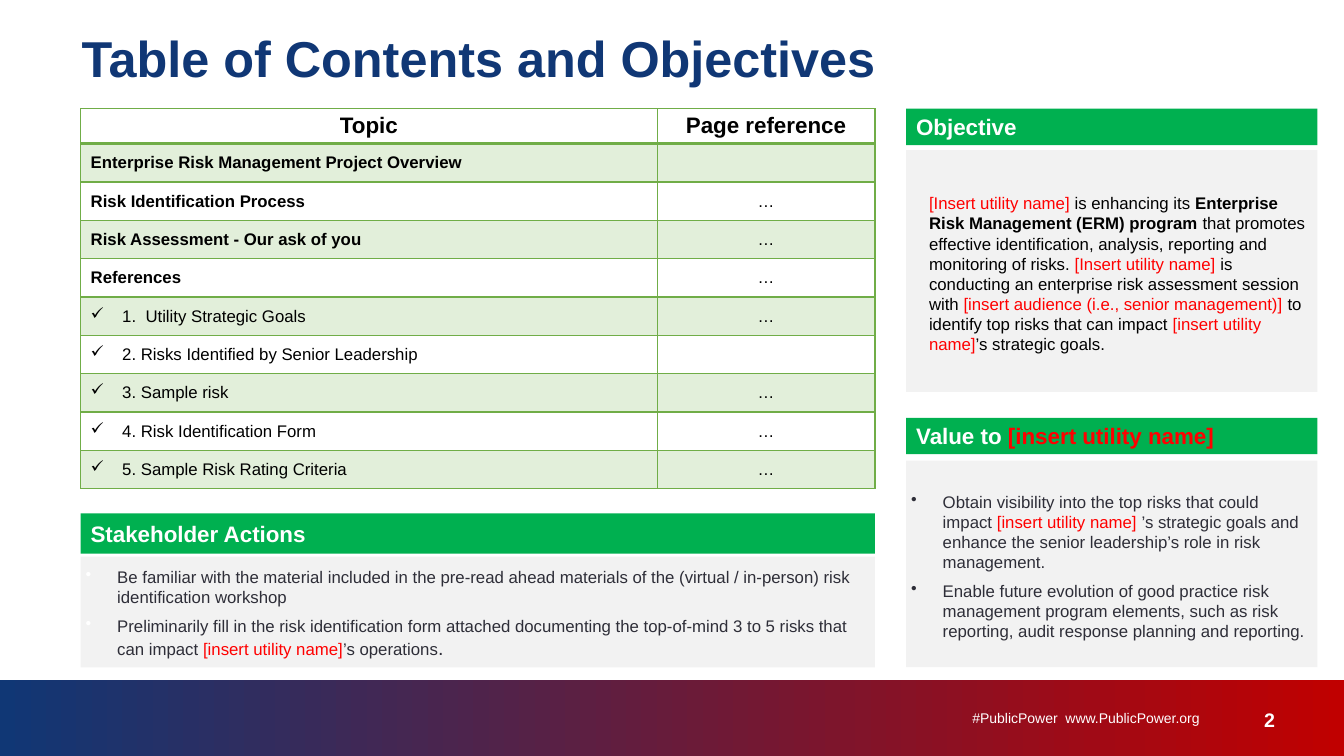
from lxml.etree import SubElement
from pptx import Presentation
from pptx.dml.color import RGBColor
from pptx.enum.shapes import MSO_SHAPE
from pptx.enum.text import MSO_ANCHOR, MSO_AUTO_SIZE, PP_ALIGN
from pptx.oxml.ns import qn
from pptx.util import Pt

NAVY = RGBColor(0x10, 0x37, 0x75)
CRIMSON = RGBColor(0xC0, 0x00, 0x00)
RED = RGBColor(0xFF, 0x00, 0x00)
GREEN = RGBColor(0x00, 0xB0, 0x50)
BORDER_GREEN = RGBColor(0x70, 0xAD, 0x47)
PALE_GREEN = RGBColor(0xE2, 0xEF, 0xDA)
PALE_GRAY = RGBColor(0xF2, 0xF2, 0xF2)
CHARCOAL = RGBColor(0x2E, 0x2E, 0x38)
BLACK = RGBColor(0x00, 0x00, 0x00)
WHITE = RGBColor(0xFF, 0xFF, 0xFF)

LEFT, LEFT_WIDTH = 57.6, 567.4
RIGHT, RIGHT_WIDTH = 647.3, 293.8
HIGHLIGHT = {"color": RED}
BOLD = {"bold": True}


def write_text(frame, paragraphs, size=12, color=BLACK, bold=False, align=PP_ALIGN.LEFT,
               anchor=None, margins=None, line_spacing=None, space_after=0,
               left_indent=0, hanging=0, bullet=None, bullet_color=BLACK):
    if anchor is not None:
        frame.word_wrap = True
        frame.auto_size = MSO_AUTO_SIZE.NONE
        frame.vertical_anchor = anchor
    if margins:
        (frame.margin_left, frame.margin_top,
         frame.margin_right, frame.margin_bottom) = map(Pt, margins)
    for index, runs in enumerate(paragraphs):
        paragraph = frame.paragraphs[0] if index == 0 else frame.add_paragraph()
        paragraph.alignment = align
        paragraph.space_after = Pt(space_after)
        if line_spacing:
            paragraph.line_spacing = Pt(line_spacing)
        properties = paragraph._p.get_or_add_pPr()
        properties.set("marL", str(Pt(left_indent)))
        properties.set("indent", str(-Pt(hanging)))
        if bullet:
            bullet_fill = SubElement(properties, qn("a:buClr"))
            SubElement(bullet_fill, qn("a:srgbClr"), val=str(bullet_color))
            SubElement(properties, qn("a:buChar"), char=bullet)
        for text, changes in runs:
            run = paragraph.add_run()
            run.text = text
            run.font.name = "Arial"
            run.font.size = Pt(changes.get("size", size))
            run.font.bold = changes.get("bold", bold)
            run.font.color.rgb = changes.get("color", color)


def add_borders(cell, bottom_width):
    properties = cell._tc.get_or_add_tcPr()
    for side, width in (("L", 1), ("R", 1), ("T", 1), ("B", bottom_width)):
        border = SubElement(properties, qn(f"a:ln{side}"), w=str(Pt(width)))
        border_fill = SubElement(border, qn("a:solidFill"))
        SubElement(border_fill, qn("a:srgbClr"), val=str(BORDER_GREEN))


presentation = Presentation()
presentation.slide_width, presentation.slide_height = Pt(960), Pt(540)
slide = presentation.slides.add_slide(presentation.slide_layouts[5])

title = slide.shapes.title
title.left, title.top, title.width, title.height = Pt(LEFT), Pt(24.5), Pt(846.7), Pt(52.6)
write_text(title.text_frame, [[("Table of Contents and Objectives", {})]], size=36,
           color=NAVY, bold=True, anchor=MSO_ANCHOR.TOP, margins=(0, 0, 0, 0),
           line_spacing=38, left_indent=0.7)

footer_band = slide.shapes.add_shape(MSO_SHAPE.RECTANGLE, 0, Pt(486), Pt(960), Pt(54))
footer_band.shadow.inherit = False
footer_band.line.fill.background()
footer_band.fill.gradient()
footer_band.fill.gradient_angle = 180
for stop, stop_color in zip(footer_band.fill.gradient_stops, (CRIMSON, NAVY)):
    stop.color.rgb = stop_color

for left, top, width, text, size, bold in (
    (660.2, 507, 196.6, "#PublicPower\u00a0 www.PublicPower.org".replace("\u00a0", " "), 10, False),
    (872.6, 505.8, 38.2, "2", 14, True),
):
    box = slide.shapes.add_textbox(Pt(left), Pt(top), Pt(width), Pt(22))
    write_text(box.text_frame, [[(text, {})]], size=size, color=WHITE, bold=bold,
               align=PP_ALIGN.RIGHT, anchor=MSO_ANCHOR.TOP, margins=(0, 0, 0, 0))

topics = [
    ("Topic", "Page reference"),
    ("Enterprise Risk Management Project Overview", ""),
    ("Risk Identification Process", "…"),
    ("Risk Assessment - Our ask of you", "…"),
    ("References", "…"),
    ("1.  Utility Strategic Goals", "…"),
    ("2. Risks Identified by Senior Leadership", ""),
    ("3. Sample risk", "…"),
    ("4. Risk Identification Form", "…"),
    ("5. Sample Risk Rating Criteria", "…"),
]
table = slide.shapes.add_table(len(topics), 2, Pt(LEFT), Pt(77.6),
                               Pt(LEFT_WIDTH), Pt(271.6)).table
table.columns[0].width, table.columns[1].width = Pt(411.8), Pt(155.6)
for row_index, row in enumerate(topics):
    is_header = row_index == 0
    is_reference = row_index >= 5
    table.rows[row_index].height = Pt(25 if is_header else 27.4)
    for column_index, text in enumerate(row):
        cell = table.cell(row_index, column_index)
        is_topic = column_index == 0
        is_listed = is_reference and is_topic
        cell.vertical_anchor = MSO_ANCHOR.TOP if is_header else MSO_ANCHOR.MIDDLE
        add_borders(cell, 2 if is_header else 1)
        cell.fill.solid()
        cell.fill.fore_color.rgb = PALE_GREEN if row_index % 2 else WHITE
        write_text(cell.text_frame, [[(text, {})]], size=16 if is_header else 12,
                   bold=is_header or (is_topic and not is_reference),
                   align=PP_ALIGN.LEFT if is_topic and not is_header else PP_ALIGN.CENTER,
                   left_indent=22.5 if is_listed else 0,
                   hanging=22.5 if is_listed else 0,
                   bullet="✓" if is_listed else None)

heading_format = {"size": 16, "color": WHITE, "bold": True, "anchor": MSO_ANCHOR.MIDDLE}
list_format = {"color": CHARCOAL, "margins": (3.6, 7.2, 3.6, 3.6), "space_after": 6,
               "left_indent": 22.5, "hanging": 22.5, "bullet": "•"}

objective = [[
    ("[Insert utility name] ", HIGHLIGHT),
    ("is enhancing its ", {}),
    ("Enterprise Risk Management (ERM) program ", BOLD),
    ("that promotes effective identification, analysis, reporting and monitoring of risks. ", {}),
    ("[Insert utility name] ", HIGHLIGHT),
    ("is conducting an enterprise risk assessment session with ", {}),
    ("[insert audience (i.e., senior management)]", HIGHLIGHT),
    (" to identify top risks that can impact ", {}),
    ("[insert utility name]", HIGHLIGHT),
    ("’s strategic goals.", {}),
]]
actions = [
    [("Be familiar with the material included in the pre-read ahead materials of the "
      "(virtual / in-person) risk identification workshop", {})],
    [("Preliminarily fill in the risk identification form attached documenting the "
      "top-of-mind 3 to 5 risks that can impact ", {}),
     ("[insert utility name]", HIGHLIGHT), ("’s operations", {}), (".", {"size": 14})],
]
value = [
    [("Obtain visibility into the top risks that could impact ", {}),
     ("[insert utility name]", HIGHLIGHT),
     (" ’s strategic goals and enhance the senior leadership’s role in risk management.", {})],
    [("Enable future evolution of good practice risk management program elements, such as "
      "risk reporting, audit response planning and reporting.", {})],
]
value_heading = [[("Value to ", {}), ("[insert utility name]", HIGHLIGHT)]]

panels = [
    (RIGHT, 77.6, RIGHT_WIDTH, 26, GREEN, [[("Objective", {})]], heading_format),
    (RIGHT, 107.2, RIGHT_WIDTH, 172.8, PALE_GRAY, objective,
     {"anchor": MSO_ANCHOR.MIDDLE, "margins": (7.2, 7.2, 3.6, 3.6),
      "space_after": 6, "left_indent": 9.2}),
    (LEFT, 366.7, LEFT_WIDTH, 28.8, GREEN, [[("Stakeholder Actions", {})]], heading_format),
    (LEFT, 397.6, LEFT_WIDTH, 79.2, PALE_GRAY, actions,
     {**list_format, "anchor": MSO_ANCHOR.TOP, "bullet_color": WHITE}),
    (RIGHT, 298.4, RIGHT_WIDTH, 26, GREEN, value_heading, heading_format),
    (RIGHT, 329, RIGHT_WIDTH, 147.6, PALE_GRAY, value,
     {**list_format, "anchor": MSO_ANCHOR.MIDDLE, "bullet_color": CHARCOAL}),
]
for left, top, width, height, fill_color, paragraphs, text_format in panels:
    panel = slide.shapes.add_shape(MSO_SHAPE.RECTANGLE, Pt(left), Pt(top), Pt(width), Pt(height))
    panel.shadow.inherit = False
    panel.fill.solid()
    panel.fill.fore_color.rgb = fill_color
    panel.line.fill.background()
    write_text(panel.text_frame, paragraphs, **text_format)

presentation.save("out.pptx")
